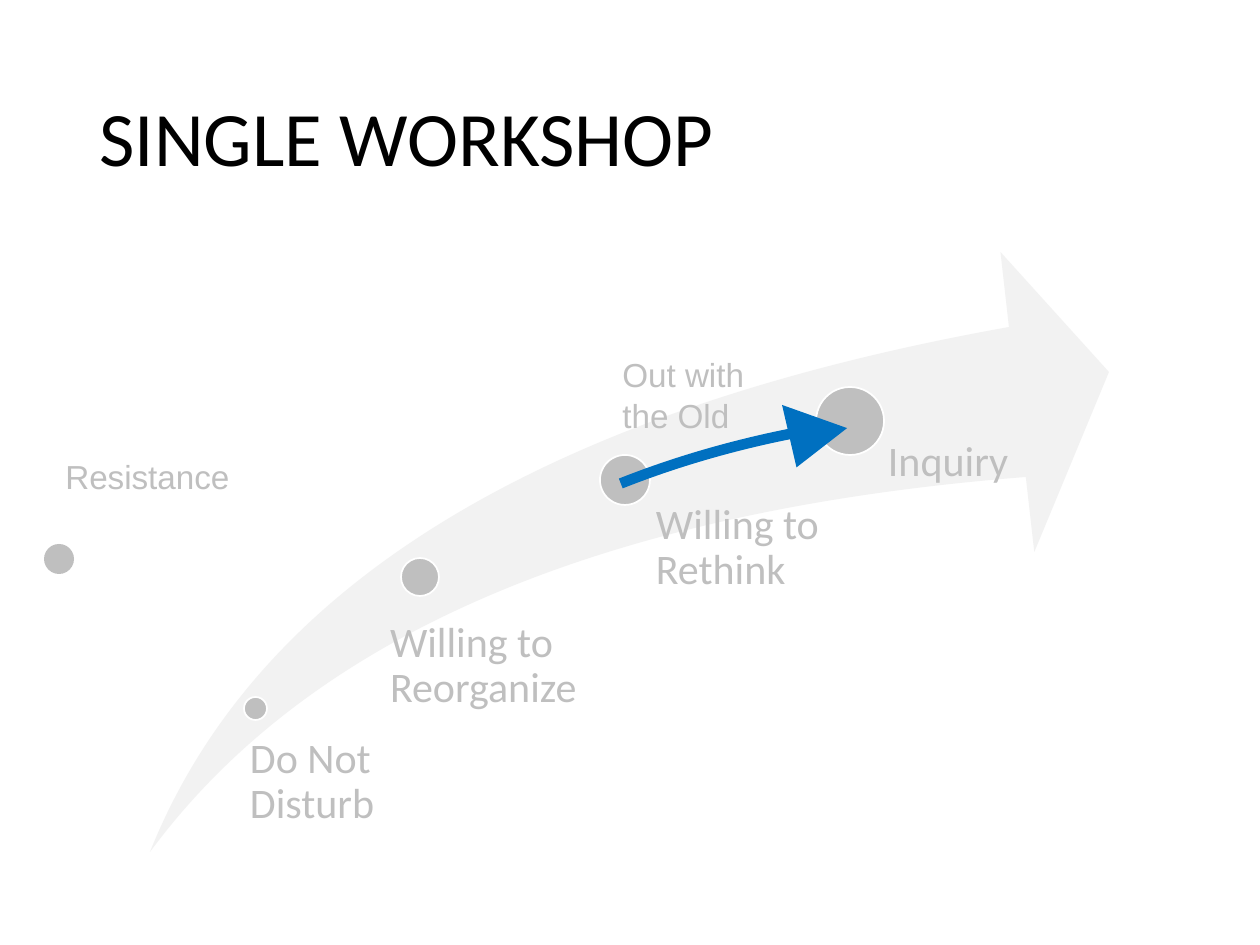
"""Build the Single Workshop slide: stages of change along a rising arrow."""
from pptx import Presentation
from pptx import util as u
from pptx.dml.color import RGBColor
from pptx.enum import shapes, text

PX = u.Inches(1) / 126
BLACK = RGBColor(0x00, 0x00, 0x00)
WHITE = RGBColor(0xFF, 0xFF, 0xFF)
PALE = RGBColor(0xF2, 0xF2, 0xF2)
GRAY = RGBColor(0xBF, 0xBF, 0xBF)
BLUE = RGBColor(0x00, 0x70, 0xC0)

deck = Presentation()
deck.slide_width, deck.slide_height = u.Inches(10), u.Inches(7.5)
slide = deck.slides.add_slide(deck.slide_layouts[6])


def add_figure(kind, box, fill=None, outline=None, weight=1):
    figure = slide.shapes.add_shape(kind, *(round(n * PX) for n in box))
    figure.shadow.inherit = False
    if fill is None:
        figure.fill.background()
    else:
        figure.fill.solid()
        figure.fill.fore_color.rgb = fill
    if outline is None:
        figure.line.fill.background()
    else:
        figure.line.color.rgb = outline
        figure.line.width = u.Pt(weight)
    return figure


def add_label(words, box, font, size, color, spacing):
    label = slide.shapes.add_textbox(*(round(n * PX) for n in box))
    frame = label.text_frame
    frame.word_wrap = True
    frame.text = words
    line = frame.paragraphs[0]
    line.line_spacing = spacing
    line.font.name, line.font.size = font, u.Pt(size)
    line.font.color.rgb = color
    return frame


title = add_label("SINGLE WORKSHOP", (87, 50, 1086, 183), "Calibri", 44, BLACK, 0.9)
title.vertical_anchor = text.MSO_ANCHOR.MIDDLE

add_figure(shapes.MSO_SHAPE.SWOOSH_ARROW, (150, 252, 959, 600), PALE)

stages = [
    ("Do Not Disturb", (244, 697, 23), (239, 737, 164, 115), 11),
    ("Willing to Reorganize", (401, 558, 38), (370, 621, 261, 78), 20),
    ("Willing to Rethink", (600, 455, 50), (630, 503, 202, 348), 26),
    ("Inquiry", (816, 387, 68), (851, 440, 202, 394), 37),
]
for stage, (left, top, size), place, indent in stages:
    add_figure(shapes.MSO_SHAPE.OVAL, (left, top, size, size), GRAY, WHITE)
    stage_text = add_label(stage, place, "Calibri", 24, GRAY, 0.9)
    stage_text.margin_left = round(indent * PX)
    stage_text.margin_top = stage_text.margin_right = stage_text.margin_bottom = 0

add_figure(shapes.MSO_SHAPE.OVAL, (44, 544, 30, 30), GRAY)
add_label("Resistance", (53, 450, 228, 53), "Arial", 19, GRAY, u.Pt(23))

progress = add_figure(shapes.MSO_SHAPE.ARC, (374, 438, 832, 344), None, BLUE, 6)
progress.adjustments[0], progress.adjustments[1] = 138.24, 171.75
progress.rotation = 346.4
progress_tip = add_figure(shapes.MSO_SHAPE.ISOSCELES_TRIANGLE, (771, 415, 69, 54), BLUE)
progress_tip.rotation = 199.6

add_label("Out with the Old", (610, 348, 180, 93), "Arial", 19, GRAY, u.Pt(23))

deck.save("out.pptx")
